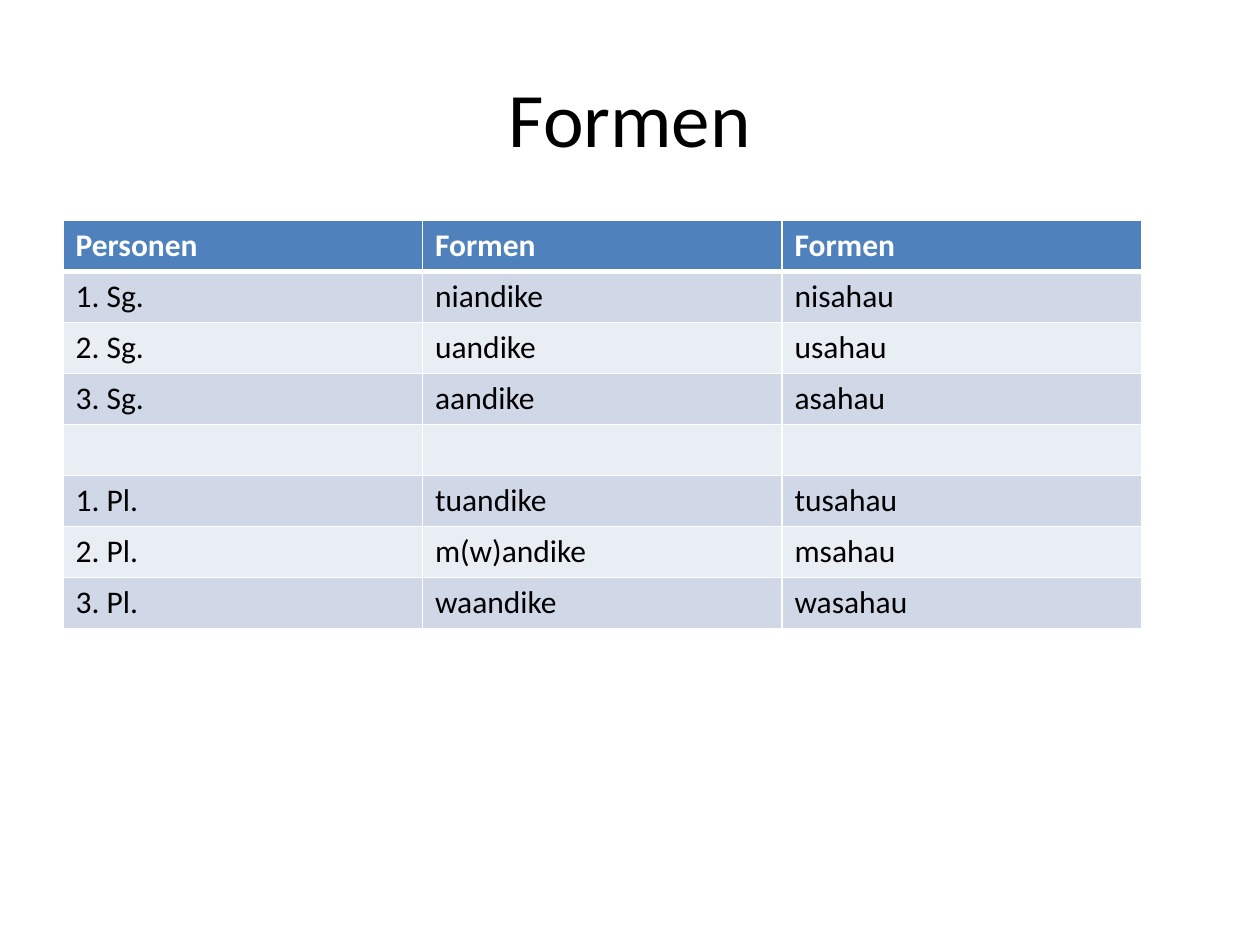
from lxml.etree import SubElement
from pptx import Presentation
from pptx.dml.color import RGBColor as Color
from pptx.enum.text import MSO_ANCHOR as Anchor, PP_ALIGN as Align
from pptx.oxml.ns import qn
from pptx.util import Inches, Pt

# Content
TITLE = "Formen"
ROWS = [
    ("Personen", "Formen", "Formen"),
    ("1. Sg.", "niandike", "nisahau"),
    ("2. Sg.", "uandike", "usahau"),
    ("3. Sg.", "aandike", "asahau"),
    ("", "", ""),
    ("1. Pl.", "tuandike", "tusahau"),
    ("2. Pl.", "m(w)andike", "msahau"),
    ("3. Pl.", "waandike", "wasahau"),
]

# Style
FONT = "Calibri"
COLORS = {"text": "000000", "header_text": "FFFFFF", "header": "4F81BD",
          "odd": "D0D8E8", "even": "E9EDF4", "border": "FFFFFF"}
THIN, THICK = 1, 3

# Layout as shares of the slide
WIDTH, HEIGHT = Inches(10), Inches(7.5)
MARGIN = int(WIDTH * 0.05)
TITLE_TOP, TITLE_HEIGHT = int(HEIGHT * 0.04), Inches(1.25)
TABLE_TOP, TABLE_WIDTH = Inches(1.75), Inches(8.56)
ROW_HEIGHT = Inches(3.24) // len(ROWS)


def add_span(para, text, size, color, bold=False):
    span = para.add_run()
    span.text = text
    span.font.name = FONT
    span.font.size = Pt(size)
    span.font.bold = bold
    span.font.color.rgb = Color.from_string(COLORS[color])


def add_borders(cell, top, bottom):
    properties = cell._tc.get_or_add_tcPr()
    for side, points in (("L", THIN), ("R", THIN), ("T", top), ("B", bottom)):
        line = SubElement(properties, qn(f"a:ln{side}"), w=str(Pt(points)))
        fill = SubElement(line, qn("a:solidFill"))
        SubElement(fill, qn("a:srgbClr"), val=COLORS["border"])


deck = Presentation()
deck.slide_width, deck.slide_height = WIDTH, HEIGHT
page = deck.slides.add_slide(deck.slide_layouts[6])

# Title
box = page.shapes.add_textbox(MARGIN, TITLE_TOP, WIDTH - 2 * MARGIN, TITLE_HEIGHT)
frame = box.text_frame
frame.word_wrap = True
frame.vertical_anchor = Anchor.MIDDLE
frame.paragraphs[0].alignment = Align.CENTER
add_span(frame.paragraphs[0], TITLE, 44, "text")

# Table of forms
table = page.shapes.add_table(len(ROWS), len(ROWS[0]), MARGIN, TABLE_TOP,
                              TABLE_WIDTH, ROW_HEIGHT * len(ROWS)).table
for r, words in enumerate(ROWS):
    table.rows[r].height = ROW_HEIGHT
    header = r == 0
    shade = "header" if header else "odd" if r % 2 else "even"
    for c, word in enumerate(words):
        cell = table.cell(r, c)
        add_borders(cell, THICK if r == 1 else THIN, THICK if header else THIN)
        cell.fill.solid()
        cell.fill.fore_color.rgb = Color.from_string(COLORS[shade])
        para = cell.text_frame.paragraphs[0]
        if word:
            add_span(para, word, 18, "header_text" if header else "text", header)

deck.save("out.pptx")
